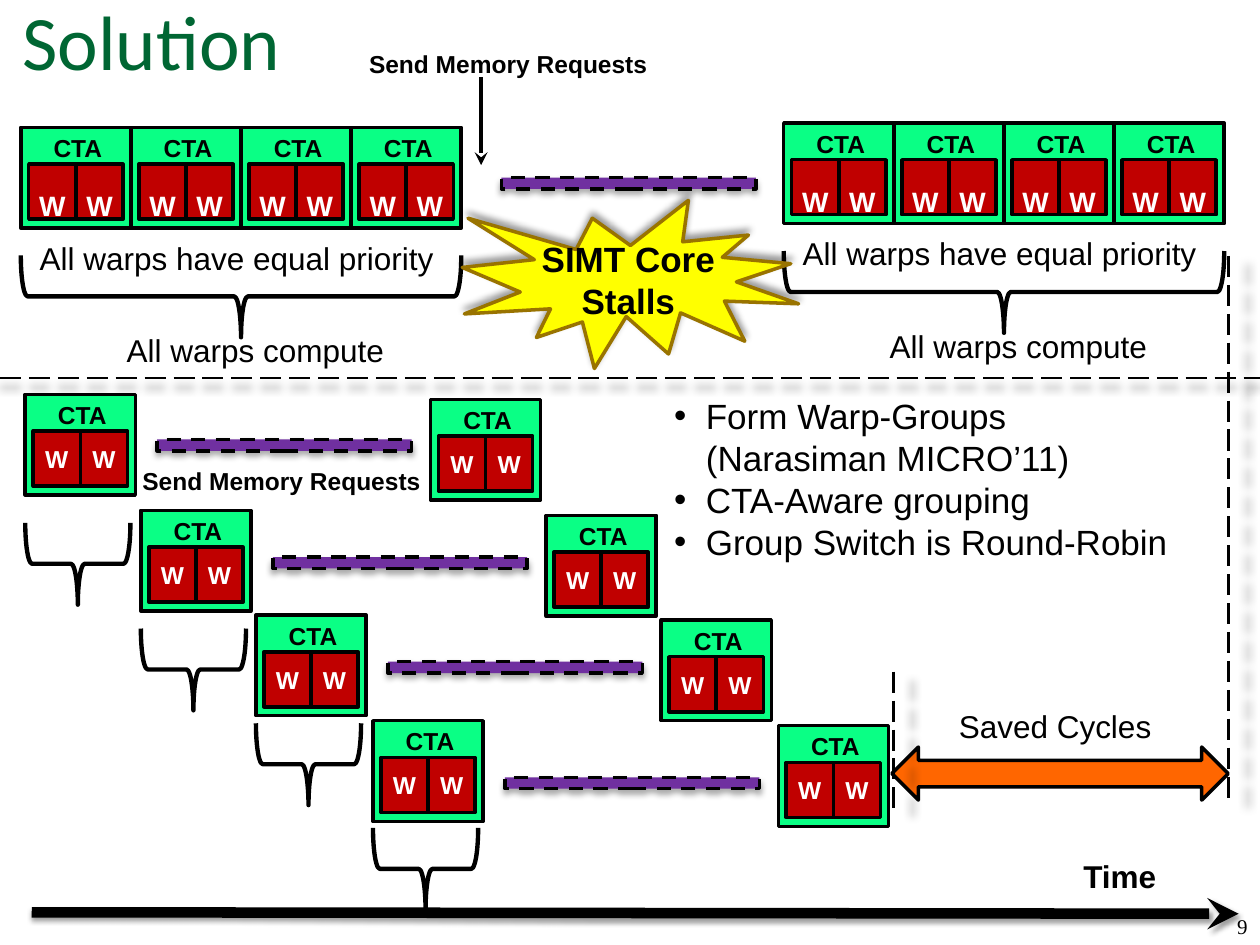
from lxml import etree
from pptx import Presentation
from pptx.dml.color import RGBColor
from pptx.enum.dml import MSO_LINE
from pptx.enum.shapes import MSO_CONNECTOR, MSO_SHAPE
from pptx.enum.text import MSO_ANCHOR, PP_ALIGN
from pptx.oxml.ns import qn
from pptx.util import Cm, Pt

RECT, BRACE = MSO_SHAPE.RECTANGLE, MSO_SHAPE.LEFT_BRACE
BURST, DOUBLE_ARROW = MSO_SHAPE.EXPLOSION1, MSO_SHAPE.LEFT_RIGHT_ARROW
DASH, LONG_DASH = MSO_LINE.DASH, MSO_LINE.LONG_DASH
LEFT, CENTER, RIGHT = PP_ALIGN.LEFT, PP_ALIGN.CENTER, PP_ALIGN.RIGHT
TOP, MIDDLE, BOTTOM = MSO_ANCHOR.TOP, MSO_ANCHOR.MIDDLE, MSO_ANCHOR.BOTTOM

BLACK, WHITE, GREEN, RED = "000000", "FFFFFF", "0AFF85", "C00000"
CTA_W, CTA_H = 2.22, 2.03


def rgb(value):
    return RGBColor.from_string(value)


def set_shadow(sp, alpha=None, blur=0, dist=0, angle=0):
    """Replace the theme shadow by none, or by an outer shadow (points, degrees)."""
    props = sp._element.spPr
    for old in props.findall(qn("a:effectLst")):
        props.remove(old)
    effects = etree.SubElement(props, qn("a:effectLst"))
    if alpha:
        outer = etree.SubElement(effects, qn("a:outerShdw"), blurRad=str(Pt(blur)),
                                 dist=str(Pt(dist)), dir=str(angle * 60000),
                                 algn="ctr", rotWithShape="0")
        color = etree.SubElement(outer, qn("a:srgbClr"), val=BLACK)
        etree.SubElement(color, qn("a:alpha"), val=str(alpha * 1000))


def style_text(tf, text, size, color=BLACK, bold=False, align=LEFT, font="Arial", anchor=TOP):
    tf.text = text
    tf.word_wrap = True
    tf.vertical_anchor = anchor
    for p in tf.paragraphs:
        p.alignment = align
        for r in p.runs:
            r.font.size, r.font.bold, r.font.name = Pt(size), bold, font
            r.font.color.rgb = rgb(color)


def add_label(s, box, text, size, **style):
    sp = s.shapes.add_textbox(*map(Cm, box))
    style_text(sp.text_frame, text, size, **style)
    return sp


def add_block(s, kind, box, fill=None, line=BLACK, width=2, shadow=()):
    sp = s.shapes.add_shape(kind, *map(Cm, box))
    if fill:
        sp.fill.solid()
        sp.fill.fore_color.rgb = rgb(fill)
    else:
        sp.fill.background()
    sp.line.color.rgb = rgb(line)
    sp.line.width = Pt(width)
    set_shadow(sp, *shadow)
    return sp


def add_line(s, ends, width, dash=None, arrow=False, shadow=()):
    sp = s.shapes.add_connector(MSO_CONNECTOR.STRAIGHT, *map(Cm, ends))
    sp.line.color.rgb = rgb(BLACK)
    sp.line.width = Pt(width)
    if dash:
        sp.line.dash_style = dash
    if arrow:
        etree.SubElement(sp.line._get_or_add_ln(), qn("a:tailEnd"), type="stealth")
    set_shadow(sp, *shadow)


def add_brace(s, x, y, w, h):
    """Brace opening upwards that fills the given box."""
    sp = add_block(s, BRACE, (x + (w - h) / 2, y + (h - w) / 2, h, w), width=2.5)
    sp.rotation = 270


def add_cta(s, x, y, size=14, drop=0):
    """CTA box holding two warps; drop pushes the warp letters down."""
    add_block(s, RECT, (x, y, CTA_W, CTA_H), GREEN)
    for dx in (1.11, 0.16):
        tf = add_block(s, RECT, (x + dx, y + 0.74, 0.95, 1.11), RED).text_frame
        style_text(tf, "W", size, color=WHITE, bold=True, align=CENTER, anchor=MIDDLE)
        tf.margin_left = tf.margin_right = tf.margin_bottom = 0
        tf.margin_top = Cm(drop)
    add_label(s, (x + 0.41, y - 0.01, 1.53, 0.86), "CTA", 14, bold=True)


def add_memory_bar(s, x, y):
    sp = add_block(s, RECT, (x, y, 5.13, 0.23), "7030A0", shadow=(32, 3.5, 2.2, 90))
    sp.line.dash_style = DASH


def add_equal_priority(s, x, y):
    """Four CTAs side by side, with brace and captions."""
    for i in range(4):
        add_cta(s, x + i * CTA_W, y, size=16, drop=0.56)
    add_brace(s, x, y + 2.58, 4 * CTA_W, 1.65)
    add_label(s, (x + 1.02, y + 3.98, 7.42, 1.02), "All warps compute", 18, align=CENTER)
    add_label(s, (x + 0.13, y + 2.12, 8.89, 1.02), "All warps have equal priority", 18)


def add_group_row(s, x, y, bar_y, brace_y):
    """One warp group: compute, wait for memory, compute again."""
    add_cta(s, x, y)
    add_brace(s, x, brace_y, 2.12, 1.65)
    add_memory_bar(s, x + 2.66, bar_y)
    add_cta(s, x + 8.17, y + 0.1)


def add_bullets(s, box):
    lines = ("Form Warp-Groups", "(Narasiman MICRO’11)",
             "CTA-Aware grouping", "Group Switch is Round-Robin")
    sp = add_label(s, box, "\n".join(lines), 20)
    for i, p in enumerate(sp.text_frame.paragraphs):
        props = p._p.get_or_add_pPr()
        props.set("marL", str(Cm(0.64)))
        if i != 1:
            props.set("indent", str(Cm(-0.64)))
            etree.SubElement(props, qn("a:buFont"), typeface="Arial")
            etree.SubElement(props, qn("a:buChar"), char="•")


def add_saved_cycles(s, x, y):
    add_block(s, DOUBLE_ARROW, (x, y, 6.78, 1.07), "FF6600")
    add_label(s, (x + 0.43, y - 0.94, 5.72, 1.02), "Saved Cycles", 18, align=CENTER)


def add_stall(s, x, y):
    """Burst that marks the stalled core."""
    sp = add_block(s, BURST, (x, y, 6.78, 3.39), "FFFF00", "997300", shadow=(40, 4, 3, 270))
    tf = sp.text_frame
    style_text(tf, "SIMT Core Stalls", 20, bold=True, align=CENTER, anchor=MIDDLE)
    tf.margin_left = tf.margin_right = 0


def main():
    prs = Presentation()
    prs.slide_width, prs.slide_height = Cm(25.4), Cm(19.05)
    s = prs.slides.add_slide(prs.slide_layouts[6])

    # Title and page number
    add_label(s, (0.2, -0.25, 24.33, 2.11), "Solution", 44, color="006633",
              font="Calibri", anchor=MIDDLE)
    add_label(s, (19.48, 17.78, 5.92, 1.27), "9", 12, align=RIGHT,
              font="Times New Roman", anchor=BOTTOM)

    # Lower half: staggered warp groups (x, y, bar y, brace y)
    for row in ((0.51, 7.95, 8.86, 10.54), (2.84, 10.29, 11.23, 12.67),
                (5.16, 12.4, 13.34, 14.58), (7.52, 14.53, 15.67, 16.69)):
        add_group_row(s, *row)
    add_label(s, (2.62, 9.27, 7.82, 0.86), "Send Memory Requests", 14, bold=True)
    add_saved_cycles(s, 17.98, 15.06)

    # Upper half: every warp stalls together
    add_equal_priority(s, 0.42, 2.57)
    add_equal_priority(s, 15.8, 2.48)
    add_label(s, (7.19, 0.86, 6.15, 0.86), "Send Memory Requests", 14, bold=True)
    add_stall(s, 9.32, 4.04)
    add_line(s, (9.7, 1.55, 9.7, 3.33), 2.5, arrow=True)
    add_memory_bar(s, 10.11, 3.58)

    # Time axis
    add_line(s, (0.64, 18.39, 24.97, 18.42), 6, arrow=True, shadow=(38, 3.1, 1.6, 90))
    add_label(s, (21.59, 17.15, 4.45, 1.02), "Time", 18, bold=True)

    # Dashed divider and the two end-of-work markers
    add_line(s, (0, 7.62, 25.4, 7.62), 1.5, LONG_DASH, shadow=(40, 5, 5, 90))
    for x, top, bottom in ((18.01, 13.54, 16.31), (24.77, 5.16, 16.13)):
        add_line(s, (x, top, x, bottom), 1.5, LONG_DASH, shadow=(40, 5, 12, 25))

    add_bullets(s, (13.34, 7.82, 11.23, 4.52))
    prs.save("out.pptx")


if __name__ == "__main__":
    main()
